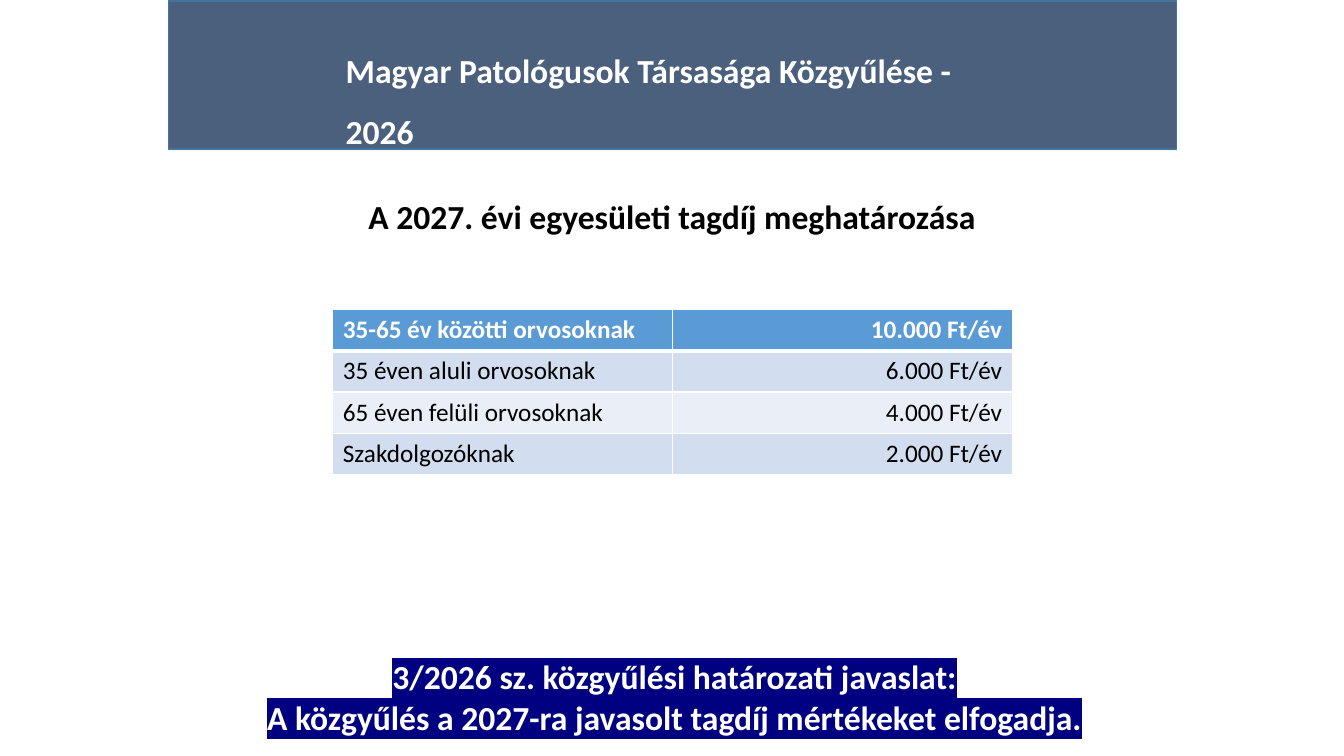
from lxml.etree import SubElement
from pptx import Presentation
from pptx.dml.color import RGBColor
from pptx.enum.shapes import MSO_SHAPE
from pptx.enum.text import MSO_AUTO_SIZE, PP_ALIGN
from pptx.oxml import parse_xml
from pptx.oxml.ns import nsdecls, qn
from pptx.util import Pt

PX = 9144  # 100 px to the inch
COLORS = {
    "white": "FFFFFF", "black": "000000", "banner": "4B607C", "banner_line": "43739E",
    "highlight": "000080", "header": "5B9BD5", "band_dark": "D2DEEF", "band_light": "EAEFF7",
}
FEES = [
    ("35-65 év közötti orvosoknak", "10.000 Ft/év"),
    ("35 éven aluli orvosoknak", "6.000 Ft/év"),
    ("65 éven felüli orvosoknak", "4.000 Ft/év"),
    ("Szakdolgozóknak", "2.000 Ft/év"),
]
TEXTS = [
    ((333, 25, 668, 64), ["Magyar Patológusok Társasága Közgyűlése - 2026"],
     "white", None, {"line_spacing": 1.5}),
    ((202, 189, 929, 50), ["A 2027. évi egyesületi tagdíj meghatározása"],
     "black", None, {"alignment": PP_ALIGN.CENTER}),
    ((248, 646, 842, 91), ["3/2026 sz. közgyűlési határozati javaslat:",
                           "A közgyűlés a 2027-ra javasolt tagdíj mértékeket elfogadja."],
     "white", "highlight", {"alignment": PP_ALIGN.CENTER}),
]


def rgb(name):
    return RGBColor.from_string(COLORS[name])


def write(paragraph, text, color, **font_format):
    """Add a Calibri run to the paragraph and return it."""
    run = paragraph.add_run()
    run.text = text
    run.font.color.rgb = rgb(color)
    for attribute, value in {"name": "Calibri", **font_format}.items():
        setattr(run.font, attribute, value)
    return run


deck = Presentation()
deck.slide_width, deck.slide_height = 1333 * PX, 750 * PX
slide = deck.slides.add_slide(deck.slide_layouts[6])

banner = slide.shapes.add_shape(MSO_SHAPE.RECTANGLE, 167 * PX, 1 * PX, 1000 * PX, 147 * PX)
banner.shadow.inherit = False
banner.fill.solid()
banner.fill.fore_color.rgb = rgb("banner")
banner.line.color.rgb = rgb("banner_line")
banner.line.width = Pt(1)

for bounds, lines, color, highlight, paragraph_format in TEXTS:
    frame = slide.shapes.add_textbox(*(length * PX for length in bounds)).text_frame
    frame.word_wrap = True
    frame.auto_size = MSO_AUTO_SIZE.SHAPE_TO_FIT_TEXT
    for index, line in enumerate(lines):
        paragraph = frame.add_paragraph() if index else frame.paragraphs[0]
        for attribute, value in paragraph_format.items():
            setattr(paragraph, attribute, value)
        run = write(paragraph, line, color, size=Pt(24), bold=True)
        if highlight:
            run.font._element.find(qn("a:solidFill")).addnext(parse_xml(
                f'<a:highlight {nsdecls("a")}><a:srgbClr val="{COLORS[highlight]}"/></a:highlight>'))

fee_table = slide.shapes.add_table(len(FEES), 2, 330 * PX, 307 * PX, 674 * PX, 164 * PX).table
for row, fee in enumerate(FEES):
    fee_table.rows[row].height = 41 * PX
    is_header = row == 0
    fill = "header" if is_header else ("band_dark" if row % 2 else "band_light")
    widths = {"lnL": 1, "lnR": 1, "lnT": 3 if row == 1 else 1, "lnB": 3 if is_header else 1}
    for column, text in enumerate(fee):
        cell = fee_table.cell(row, column)
        paragraph = cell.text_frame.paragraphs[0]
        paragraph.alignment = PP_ALIGN.RIGHT if column else PP_ALIGN.LEFT
        write(paragraph, text, "white" if is_header else "black", size=Pt(18), bold=is_header)
        properties = cell._tc.get_or_add_tcPr()
        for side, width in widths.items():
            border = SubElement(properties, qn(f"a:{side}"), w=str(Pt(width)))
            border_fill = SubElement(border, qn("a:solidFill"))
            SubElement(border_fill, qn("a:srgbClr"), val=COLORS["white"])
        cell.fill.solid()
        cell.fill.fore_color.rgb = rgb(fill)

deck.save("out.pptx")
